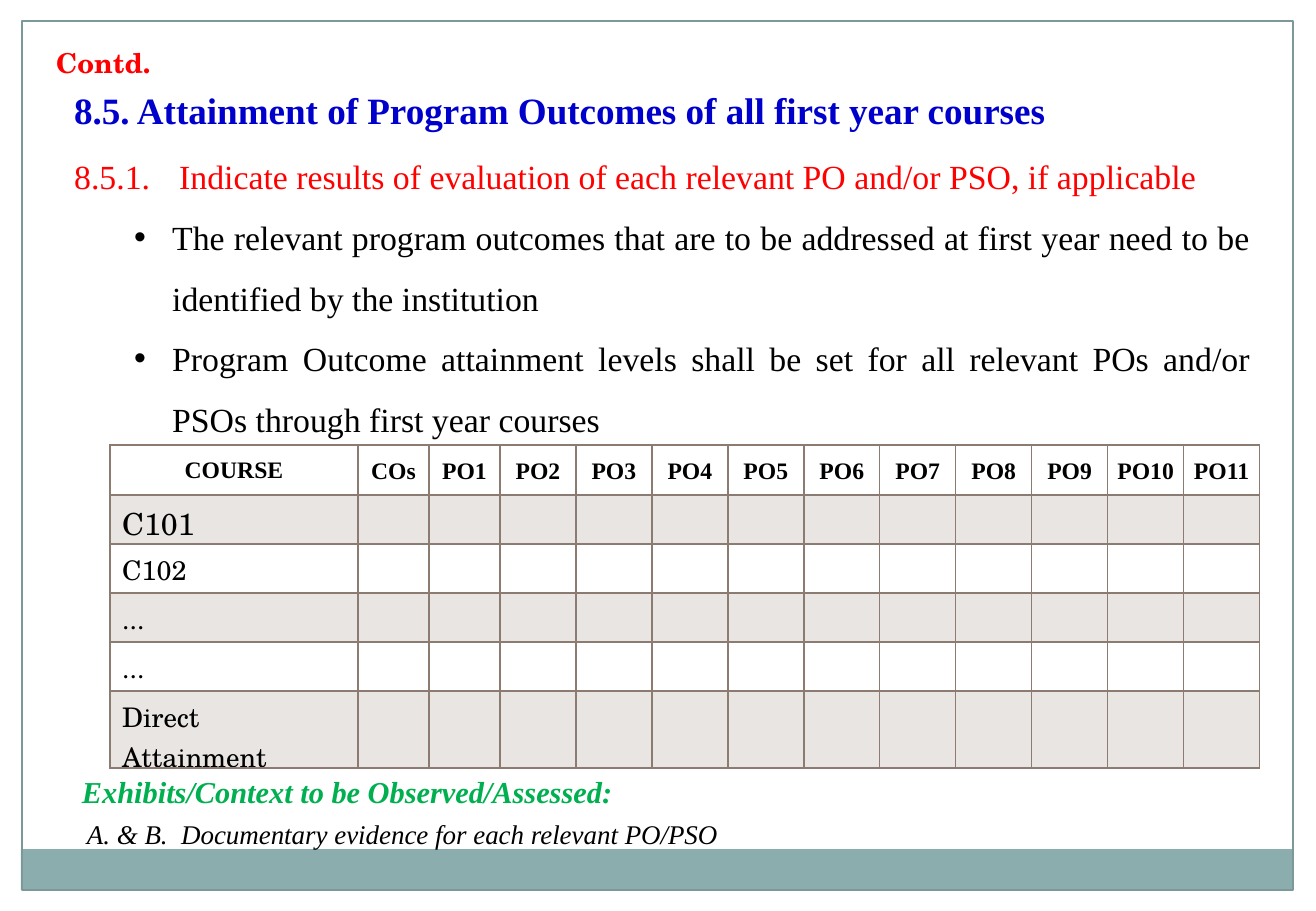
"""Build the slide on attainment of program outcomes in first year courses."""
from dataclasses import dataclass

from lxml import etree
from pptx import Presentation
from pptx import util as u
from pptx.dml import color
from pptx.enum import shapes, text
from pptx.oxml import ns

EMU_PER_PX = 7526
SERIF = "Times New Roman"
SCHOOL = "TeX Gyre Schola"
COLOURS = {
    "black": "000000", "white": "FFFFFF", "red": "FF0000", "blue": "0000CC",
    "green": "00B050", "teal": "8CADAE", "frame": "7C999A", "grid": "8C7B70",
    "band": "E8E5E2",
}
LEFT, CENTER, JUSTIFY = (text.PP_ALIGN.LEFT, text.PP_ALIGN.CENTER,
                         text.PP_ALIGN.JUSTIFY)


@dataclass
class Box:
    left: int
    top: int
    width: int
    height: int
    fill: str = ""
    line: str = ""


@dataclass
class Line:
    words: str
    size: float
    colour: str = "black"
    bold: bool = False
    italic: bool = False
    align: text.PP_ALIGN = LEFT
    margin: int = 0
    hanging: int = 0
    spacing: float = 1.0
    before: float = 0
    level: int = 0
    bullet: str = ""


BACKDROP = [
    Box(0, 0, 1316, 21, fill="white"),
    Box(1294, 0, 22, 911, fill="white"),
    Box(0, 0, 22, 911, fill="white"),
    Box(21, 849, 1271, 41, fill="teal"),
    Box(22, 21, 1271, 869, line="frame"),
]
CONTINUED = Box(44, 40, 1228, 40)
CRITERIA = Box(62, 81, 1201, 368)
EXHIBITS = Box(62, 749, 999, 108)
ATTAINMENT = Box(110, 445, 1150, 295)

CRITERIA_LINES = [
    Line("8.5. Attainment of Program Outcomes of all first year courses", 22,
         "blue", bold=True),
    Line("8.5.1.\tIndicate results of evaluation of each relevant PO and/or PSO,"
         " if applicable", 20, "red", margin=105, hanging=105, before=14.4),
    *(Line(words, 20, align=JUSTIFY, margin=98, hanging=38, spacing=1.5,
           level=1, bullet="•")
      for words in (
          "The relevant program outcomes that are to be addressed at first year"
          " need to be identified by the institution",
          "Program Outcome attainment levels shall be set for all relevant POs"
          " and/or PSOs through first year courses")),
]
EXHIBIT_LINES = [
    Line("Exhibits/Context to be Observed/Assessed:", 18, "green", bold=True,
         italic=True, align=JUSTIFY, margin=8, spacing=1.5),
    Line("A. & B.  Documentary evidence for each relevant PO/PSO", 16,
         italic=True, margin=13, before=4.9),
]
HEADERS = ["COURSE", "COs", *(f"PO{number}" for number in range(1, 12))]
COURSES = ["C101", "C102", "...", "...", "Direct Attainment"]
COLUMN_WIDTHS = [248, 71, 71] + [76] * 10
ROW_HEIGHTS = [50] + [49] * 5


def px(length: int) -> int:
    """Turn pixels into EMU."""
    return u.Emu(length * EMU_PER_PX)


def rgb(name: str) -> color.RGBColor:
    """Look up a named colour."""
    return color.RGBColor.from_string(COLOURS[name])


def place(shape, box: Box) -> None:
    """Move a shape to its box."""
    shape.left, shape.top = px(box.left), px(box.top)
    shape.width, shape.height = px(box.width), px(box.height)


def write(paragraph, words: str, *, size: float, font: str = SERIF,
          colour: str = "black", bold: bool = False, italic: bool = False,
          align=LEFT, spacing: float = 1.0, before: float = 0) -> None:
    """Write one formatted run into a paragraph."""
    paragraph.alignment = align
    paragraph.line_spacing = spacing
    paragraph.space_before = u.Pt(before)
    run = paragraph.add_run()
    run.text = words
    run.font.name, run.font.size = font, u.Pt(size)
    run.font.bold, run.font.italic = bold, italic
    run.font.color.rgb = rgb(colour)


def indent(paragraph, line: Line) -> None:
    """Set the indent and bullet of a paragraph."""
    paragraph.level = line.level
    properties = paragraph._p.get_or_add_pPr()
    properties.set("marL", str(px(line.margin)))
    properties.set("indent", str(px(-line.hanging)))
    if line.bullet:
        etree.SubElement(properties, ns.qn("a:buFont"), typeface="Arial")
        etree.SubElement(properties, ns.qn("a:buChar"), char=line.bullet)
    else:
        etree.SubElement(properties, ns.qn("a:buNone"))


def fill_frame(frame, lines: list[Line]) -> None:
    """Write the lines into a text frame."""
    frame.word_wrap = True
    frame.auto_size = text.MSO_AUTO_SIZE.SHAPE_TO_FIT_TEXT
    frame.vertical_anchor = text.MSO_ANCHOR.TOP
    for index, line in enumerate(lines):
        paragraph = frame.add_paragraph() if index else frame.paragraphs[0]
        write(paragraph, line.words, size=line.size, colour=line.colour,
              bold=line.bold, italic=line.italic, align=line.align,
              spacing=line.spacing, before=line.before)
        indent(paragraph, line)


def add_rectangle(slide, box: Box) -> None:
    """Add a rectangle with the fill and outline of its box."""
    rectangle = slide.shapes.add_shape(
        shapes.MSO_SHAPE.RECTANGLE, px(box.left), px(box.top),
        px(box.width), px(box.height))
    rectangle.shadow.inherit = False
    if box.fill:
        rectangle.fill.solid()
        rectangle.fill.fore_color.rgb = rgb(box.fill)
    else:
        rectangle.fill.background()
    if box.line:
        rectangle.line.color.rgb = rgb(box.line)
        rectangle.line.width = u.Pt(0.75)
    else:
        rectangle.line.fill.background()


def style_cell(cell, row: int) -> None:
    """Set the fill and the borders of a table cell."""
    cell.vertical_anchor = text.MSO_ANCHOR.MIDDLE
    if row % 2:
        cell.fill.solid()
        cell.fill.fore_color.rgb = rgb("band")
    else:
        cell.fill.background()
    weights = {"lnL": 1, "lnR": 1, "lnT": 2 if row == 1 else 1,
               "lnB": 1 if row else 2}
    properties = cell._tc.get_or_add_tcPr()
    for index, (side, weight) in enumerate(weights.items()):
        border = etree.Element(ns.qn(f"a:{side}"), w=str(u.Pt(weight)))
        solid = etree.SubElement(border, ns.qn("a:solidFill"))
        etree.SubElement(solid, ns.qn("a:srgbClr"), val=COLOURS["grid"])
        properties.insert(index, border)


def add_attainment(slide) -> None:
    """Add the table of courses against program outcomes."""
    table = slide.shapes.add_table(
        len(ROW_HEIGHTS), len(HEADERS), px(ATTAINMENT.left),
        px(ATTAINMENT.top), px(ATTAINMENT.width), px(ATTAINMENT.height)).table
    table.first_row = table.horz_banding = False
    for column, width in zip(table.columns, COLUMN_WIDTHS):
        column.width = px(width)
    for row, height in enumerate(ROW_HEIGHTS):
        table.rows[row].height = px(height)
        for column in range(len(HEADERS)):
            style_cell(table.cell(row, column), row)
    for column, header in enumerate(HEADERS):
        cell = table.cell(0, column)
        if column:
            cell.margin_left = cell.margin_right = px(8)
            cell.margin_top = cell.margin_bottom = 0
        write(cell.text_frame.paragraphs[0], header, size=14, bold=True,
              align=CENTER, spacing=1.15 if column else 1.0)
    for row, course in enumerate(COURSES, 1):
        write(table.cell(row, 0).text_frame.paragraphs[0], course,
              size=18 if row == 1 else 16, font=SCHOOL)


def main() -> None:
    """Build and save the slide."""
    deck = Presentation()
    deck.slide_width, deck.slide_height = px(1316), px(911)
    slide = deck.slides.add_slide(deck.slide_layouts[1])
    for box in BACKDROP:
        add_rectangle(slide, box)
    continued = slide.shapes.title
    place(continued, CONTINUED)
    continued.text_frame.vertical_anchor = text.MSO_ANCHOR.TOP
    continued.text_frame.auto_size = text.MSO_AUTO_SIZE.NONE
    write(continued.text_frame.paragraphs[0], "Contd.", size=16.2,
          font=SCHOOL, colour="red", bold=True)
    criteria = slide.placeholders[1]
    place(criteria, CRITERIA)
    fill_frame(criteria.text_frame, CRITERIA_LINES)
    add_attainment(slide)
    exhibits = slide.shapes.add_textbox(0, 0, 0, 0)
    place(exhibits, EXHIBITS)
    fill_frame(exhibits.text_frame, EXHIBIT_LINES)
    deck.save("out.pptx")


if __name__ == "__main__":
    main()
